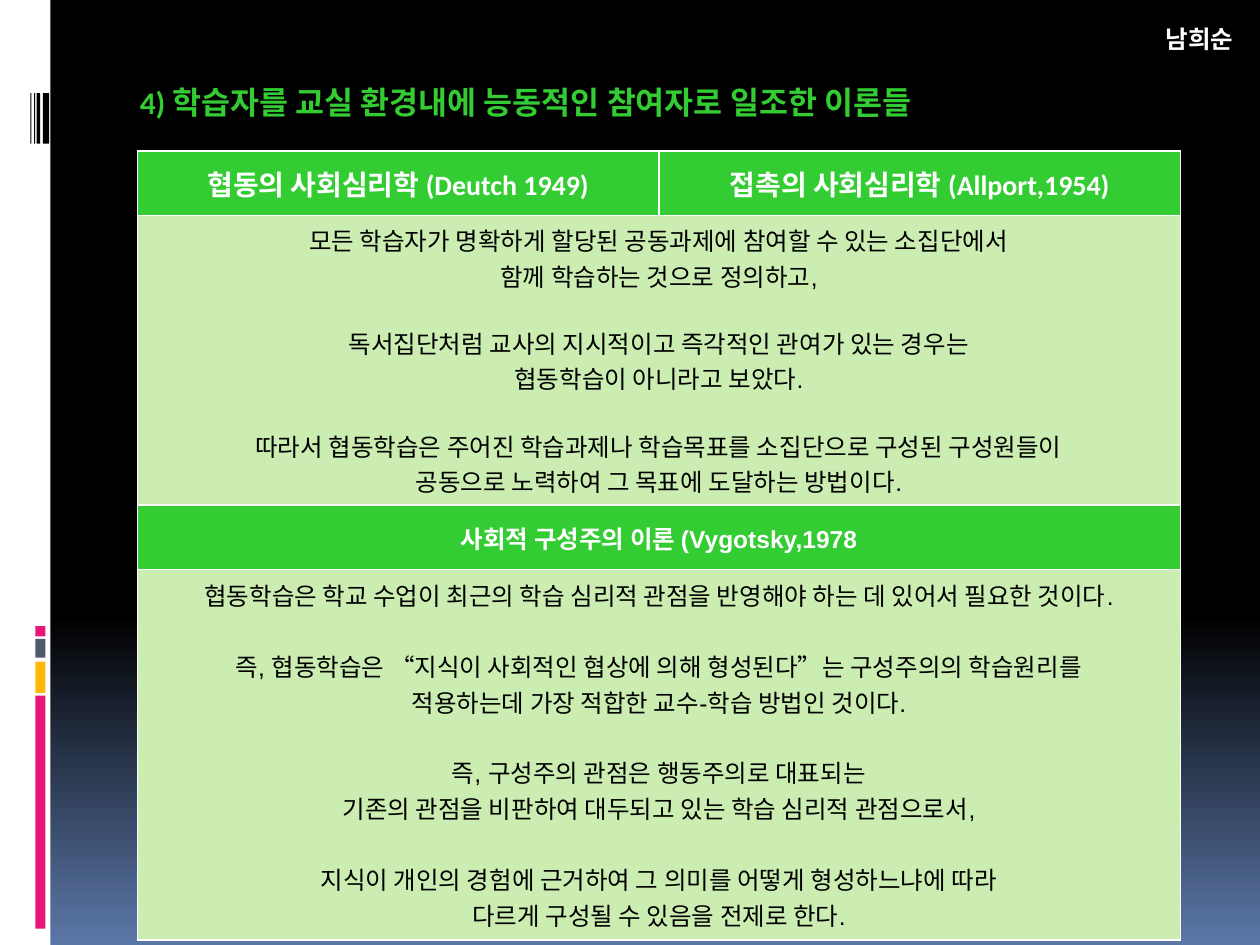
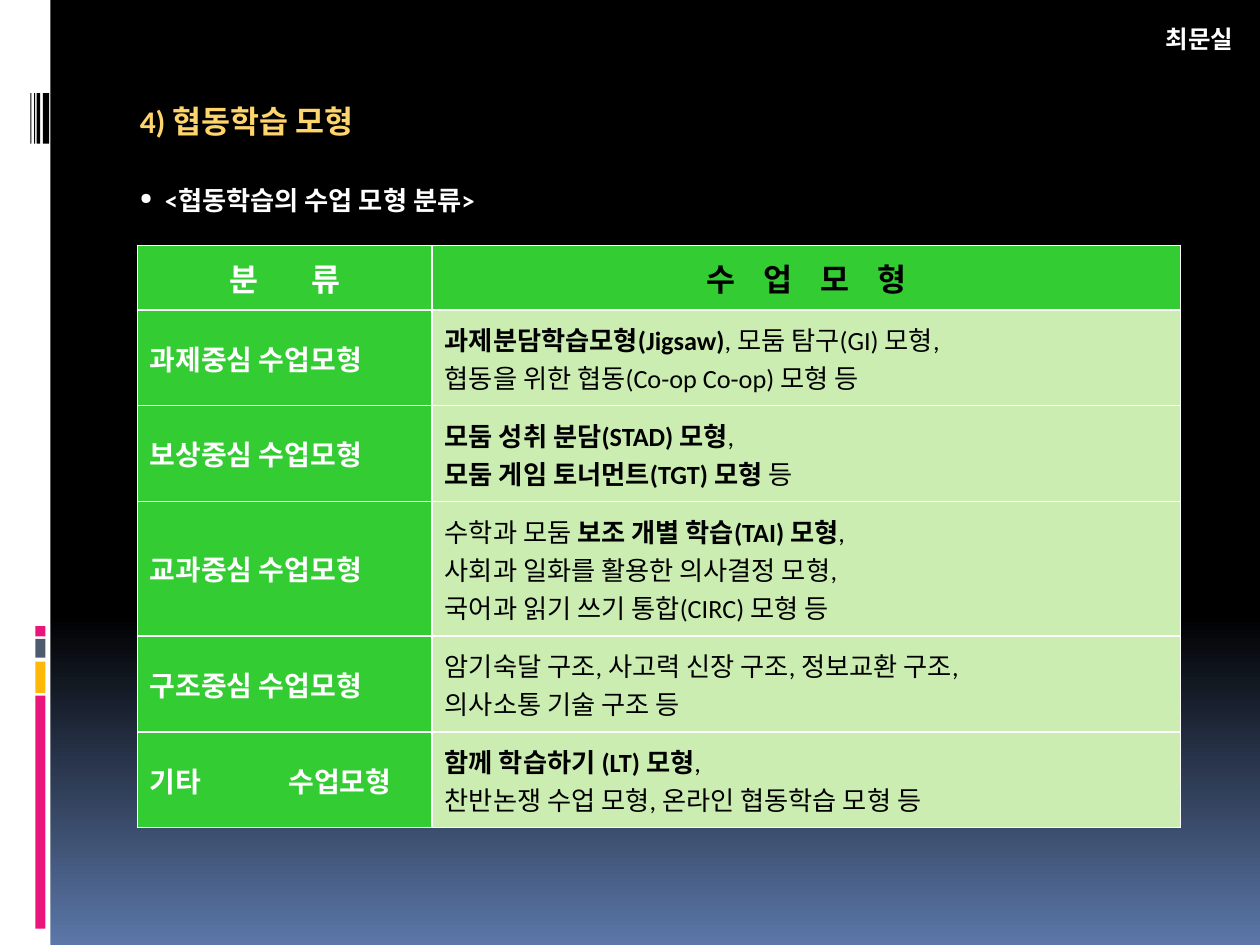
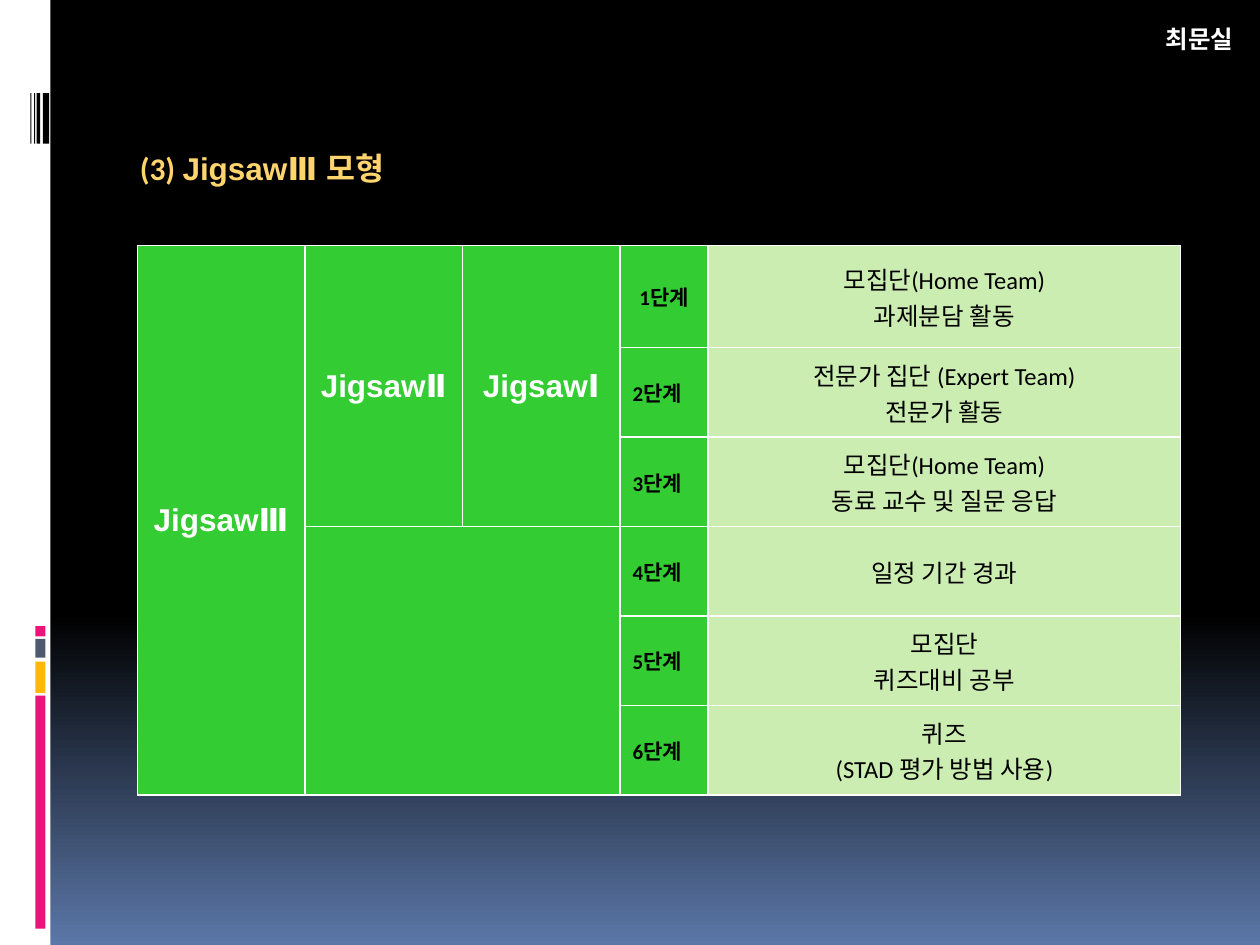
"""Builds three slides on theories and models of cooperative learning."""
from lxml.etree import SubElement
from pptx import Presentation
from pptx.dml.color import RGBColor
from pptx.enum.shapes import MSO_SHAPE
from pptx.enum.text import MSO_ANCHOR, PP_ALIGN
from pptx.oxml.ns import qn
from pptx.util import Inches, Pt

COLORS = {
    "black": "000000", "white": "FFFFFF", "sky": "5B77A8", "pink": "EA157A",
    "amber": "FEB80A", "slate": "4E5B6F", "green": "33CC33", "pale": "CCEDB1",
    "gold": "FED46C",
}
RGB = {name: RGBColor.from_string(value) for name, value in COLORS.items()}
LEFT, CENTER = PP_ALIGN.LEFT, PP_ALIGN.CENTER
SIDE_BARS = [
    (0, 0, 0.4, 7.5, "white"),
    (0.34, 0.74, 0.05, 0.4, "black"),
    (0.29, 0.74, 0.03, 0.4, "black"),
    (0.27, 0.74, 0.01, 0.4, "black"),
    (0.24, 0.74, 0.01, 0.4, "black"),
    (0.28, 5.52, 0.08, 1.85, "pink"),
    (0.28, 5.25, 0.08, 0.25, "amber"),
    (0.28, 5.07, 0.08, 0.15, "slate"),
    (0.28, 4.97, 0.08, 0.08, "pink"),
]
TITLES = [
    ("남희순", "4) 학습자를 교실 환경내에 능동적인 참여자로 일조한 이론들", "green", 0.31, 0.7, 0.05),
    ("최문실", "4) 협동학습 모형", "gold", 0.47, 1.64, 0.4),
    ("최문실", "(3) JigsawⅢ 모형", "gold", 0.47, 1.41, 0.4),
]


def write(frame, lines, size, color, bold=False, align=LEFT, font="Calibri"):
    """Writes one paragraph per line; text between asterisks is bold."""
    for number, line in enumerate(lines):
        paragraph = frame.add_paragraph() if number else frame.paragraphs[0]
        paragraph.alignment = align
        paragraph.font.size = Pt(size)
        paragraph.font.name = font
        paragraph.font.bold = bold
        paragraph.font.color.rgb = RGB[color]
        for part_number, part in enumerate(line.split("*")):
            if part:
                run = paragraph.add_run()
                run.text = part
                if part_number % 2:
                    run.font.bold = True


def add_grid(slide, top, widths, heights, pale_cells):
    """Adds a green table with white borders and the given pale cells."""
    table = slide.shapes.add_table(
        len(heights), len(widths), Inches(1.09), Inches(top),
        Inches(sum(widths)), Inches(sum(heights))).table
    table.first_row = table.horz_banding = False
    for column, width in zip(table.columns, widths):
        column.width = Inches(width)
    for row_number, height in enumerate(heights):
        table.rows[row_number].height = Inches(height)
        for column_number in range(len(widths)):
            cell = table.cell(row_number, column_number)
            cell.vertical_anchor = MSO_ANCHOR.MIDDLE
            for side in ("a:lnL", "a:lnR", "a:lnT", "a:lnB"):
                border = SubElement(cell._tc.get_or_add_tcPr(), qn(side), w=str(Pt(1)))
                SubElement(SubElement(border, qn("a:solidFill")), qn("a:srgbClr"), val=COLORS["white"])
            cell.fill.solid()
            is_pale = (row_number, column_number) in pale_cells
            cell.fill.fore_color.rgb = RGB["pale" if is_pale else "green"]
    return table


prs = Presentation()
prs.slide_width, prs.slide_height = Inches(10), Inches(7.5)
backdrop = prs.slide_master.background.fill
backdrop.gradient()
backdrop.gradient_angle = 270
for stop, position, color in zip(backdrop.gradient_stops, (0.65, 1), ("black", "sky")):
    stop.position = position
    stop.color.rgb = RGB[color]

slides, headings = [], []
for presenter, title, title_color, title_top, title_height, bottom_inset in TITLES:
    slide = prs.slides.add_slide(prs.slide_layouts[6])
    for left, top, width, height, color in SIDE_BARS:
        bar = slide.shapes.add_shape(
            MSO_SHAPE.RECTANGLE, Inches(left), Inches(top), Inches(width), Inches(height))
        bar.shadow.inherit = False
        bar.fill.solid()
        bar.fill.fore_color.rgb = RGB[color]
        bar.line.fill.background()
    for text, size, color, left, top, width, height, inset in (
        (title, 18, title_color, 1, title_top, 8.5, title_height, bottom_inset),
        (presenter, 14, "white", 9.14, -0.23, 1.95, 0.7, 0.05),
    ):
        frame = slide.shapes.add_textbox(
            Inches(left), Inches(top), Inches(width), Inches(height)).text_frame
        frame.word_wrap = True
        frame.vertical_anchor = MSO_ANCHOR.BOTTOM
        frame.margin_left, frame.margin_bottom = Inches(0.11), Inches(inset)
        write(frame, [text], size, color, bold=True)
        if text == title:
            headings.append(frame)
        else:
            frame.paragraphs[0].line_spacing = Pt(25)
    slides.append(slide)
theories_slide, models_slide, jigsaw_slide = slides
_, models_heading, jigsaw_heading = headings

psychology = add_grid(theories_slide, 1.2, [4.14, 4.14], [0.51, 2.3], [(1, 0), (1, 1)])
psychology.cell(1, 0).merge(psychology.cell(1, 1))
for column, theory in enumerate(["협동의 사회심리학 (Deutch 1949)", "접촉의 사회심리학 (Allport,1954)"]):
    write(psychology.cell(0, column).text_frame, [theory], 16, "white", True, CENTER)
constructivism = add_grid(theories_slide, 4.01, [8.28], [0.51, 2.94], [(1, 0)])
write(constructivism.cell(0, 0).text_frame, ["사회적 구성주의 이론 (Vygotsky,1978"], 14, "white", True, CENTER, "Arial")
for table, gap, gap_before, explanation in (
    (psychology, 18, (2, 4), [
        "모든 학습자가 명확하게 할당된 공동과제에 참여할 수 있는 소집단에서",
        "함께 학습하는 것으로 정의하고,",
        "독서집단처럼 교사의 지시적이고 즉각적인 관여가 있는 경우는",
        "협동학습이 아니라고 보았다.",
        "따라서 협동학습은 주어진 학습과제나 학습목표를 소집단으로 구성된 구성원들이",
        "공동으로 노력하여 그 목표에 도달하는 방법이다.",
    ]),
    (constructivism, 20, (1, 3, 5), [
        "협동학습은 학교 수업이 최근의 학습 심리적 관점을 반영해야 하는 데 있어서 필요한 것이다.",
        "즉, 협동학습은 “지식이 사회적인 협상에 의해 형성된다”는 구성주의의 학습원리를",
        "적용하는데 가장 적합한 교수-학습 방법인 것이다.",
        "즉, 구성주의 관점은 행동주의로 대표되는",
        "기존의 관점을 비판하여 대두되고 있는 학습 심리적 관점으로서,",
        "지식이 개인의 경험에 근거하여 그 의미를 어떻게 형성하느냐에 따라",
        "다르게 구성될 수 있음을 전제로 한다.",
    ]),
):
    frame = table.cell(1, 0).text_frame
    write(frame, explanation, 14, "black", align=CENTER, font="Arial")
    for number in gap_before:
        frame.paragraphs[number].space_before = Pt(gap)

models_heading.paragraphs[0].line_spacing = Pt(25)
subtitle = models_heading.add_paragraph()
subtitle.text = "<협동학습의 수업 모형 분류>"
subtitle.space_before = Pt(25)
subtitle.font.size, subtitle.font.name, subtitle.font.bold = Pt(15), "Calibri", True
subtitle.font.color.rgb = RGB["white"]
subtitle_format = subtitle._p.get_or_add_pPr()
subtitle_format.set("marL", str(Inches(0.2)))
subtitle_format.set("indent", str(-Inches(0.2)))
bullet = subtitle_format.makeelement(qn("a:buChar"), {"char": "●"})
bullet_size = subtitle_format.makeelement(qn("a:buSzPct"), {"val": "60000"})
subtitle_format.find(qn("a:defRPr")).addprevious(bullet_size)
bullet_size.addnext(bullet)

MODELS = [
    ("과제중심 수업모형", ["*과제분담학습모형(Jigsaw)*, 모둠 탐구(GI) 모형,", "협동을 위한 협동(Co-op Co-op) 모형 등"]),
    ("보상중심 수업모형", ["*모둠 성취 분담(STAD) 모형*,", "*모둠 게임 토너먼트(TGT) 모형* 등"]),
    ("교과중심 수업모형", ["수학과 모둠 *보조 개별 학습(TAI) 모형*,", "사회과 일화를 활용한 의사결정 모형,",
                    "국어과 읽기 쓰기 통합(CIRC) 모형 등"]),
    ("구조중심 수업모형", ["암기숙달 구조, 사고력 신장 구조, 정보교환 구조,", "의사소통 기술 구조 등"]),
    ("기타\t수업모형", ["*함께 학습하기 (LT) 모형*,", "찬반논쟁 수업 모형, 온라인 협동학습 모형 등"]),
]
models = add_grid(models_slide, 1.95, [2.34, 5.94], [0.51, 0.76, 0.76, 1.07, 0.76, 0.76],
                  [(row, 1) for row in range(1, 6)])
for column, (label, color, spacing) in enumerate([("분 류", "white", 13), ("수 업 모 형", "black", 6)]):
    frame = models.cell(0, column).text_frame
    write(frame, [label], 18, color, True, CENTER)
    frame.paragraphs[0].runs[0]._r.get_or_add_rPr().set("spc", str(spacing * 100))
for row, (category, examples) in enumerate(MODELS, 1):
    write(models.cell(row, 0).text_frame, [category], 16, "white", True)
    write(models.cell(row, 1).text_frame, examples, 15, "black")
other_format = models.cell(5, 0).text_frame.paragraphs[0]._p.get_or_add_pPr()
tab_stops = other_format.makeelement(qn("a:tabLst"), {})
SubElement(tab_stops, qn("a:tab"), pos=str(Inches(1.1)), algn="l")
other_format.find(qn("a:defRPr")).addprevious(tab_stops)

jigsaw_title = jigsaw_heading.paragraphs[0]
jigsaw_title.runs[0].text = "(3) "
jigsaw_name = jigsaw_title.add_run()
jigsaw_name.text = "JigsawⅢ 모형"
jigsaw_name.font.name = "Arial"

STAGES = [
    ["모집단(Home Team)", "과제분담 활동"],
    ["전문가 집단 (Expert Team)", "전문가 활동"],
    ["모집단(Home Team)", "동료 교수 및 질문 응답"],
    ["일정 기간 경과"],
    ["모집단", "퀴즈대비 공부"],
    ["퀴즈", "(STAD 평가 방법 사용)"],
]
jigsaw = add_grid(jigsaw_slide, 1.95, [1.33, 1.25, 1.25, 0.7, 3.75], [0.81] + [0.71] * 5,
                  [(row, 4) for row in range(6)])
for column, (version, last_row) in enumerate([("JigsawⅢ", 5), ("JigsawⅡ", 2), ("JigsawⅠ", 2)]):
    jigsaw.cell(0, column).merge(jigsaw.cell(last_row, column))
    write(jigsaw.cell(0, column).text_frame, [version], 18, "white", True, CENTER, "Arial")
jigsaw.cell(3, 1).merge(jigsaw.cell(5, 2))
for row, activity in enumerate(STAGES):
    write(jigsaw.cell(row, 3).text_frame, [f"{row + 1}단계"], 12, "black", True, LEFT if row else CENTER)
    write(jigsaw.cell(row, 4).text_frame, activity, 14, "black", align=CENTER)

prs.save("out.pptx")
